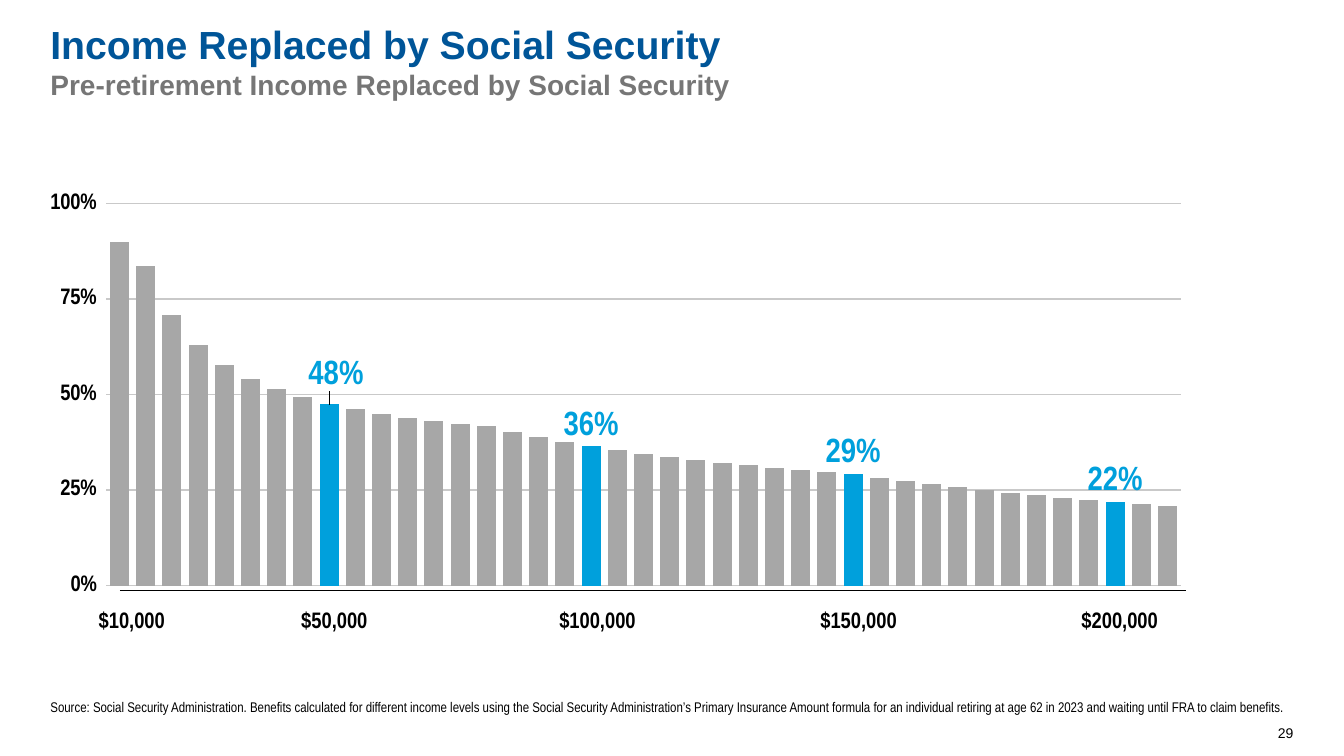
from lxml.etree import SubElement
from pptx import Presentation
from pptx.chart.data import CategoryChartData
from pptx.dml.color import RGBColor
from pptx.enum.chart import XL_CHART_TYPE as ChartType, XL_LABEL_POSITION as LabelPos
from pptx.enum.chart import XL_TICK_MARK as TickMark
from pptx.enum.shapes import MSO_CONNECTOR as Connector
from pptx.enum.text import MSO_ANCHOR as Anchor, PP_ALIGN as Align
from pptx.oxml import parse_xml
from pptx.oxml.ns import nsdecls, qn
from pptx.util import Pt

TITLE = "Income Replaced by Social Security"
SUBTITLE = "Pre-retirement Income Replaced by Social Security"
SOURCE = (
    "Source: Social Security Administration. Benefits calculated for different income "
    "levels using the Social Security Administration’s Primary Insurance Amount formula "
    "for an individual retiring at age 62 in 2023 and waiting until FRA to claim benefits."
)
PAGE = "29"
REPLACED = [
    0.9, 0.8374, 0.708, 0.6304, 0.5787, 0.5417, 0.514, 0.4925, 0.4752, 0.4611, 0.4493,
    0.4394, 0.4309, 0.4235, 0.417, 0.4026, 0.3886, 0.376, 0.3647, 0.3545, 0.3452,
    0.3367, 0.3289, 0.3218, 0.3152, 0.309, 0.3034, 0.2981, 0.2922, 0.2828, 0.274,
    0.2657, 0.2579, 0.2505, 0.2435, 0.237, 0.2307, 0.2248, 0.2192, 0.2138, 0.2087,
]
HIGHLIGHTS = [8, 18, 28, 38]
INCOMES = [("$10,000", 63.4), ("$50,000", 208.1), ("$100,000", 392.4),
           ("$150,000", 578.9), ("$200,000", 765.4)]  # label, left edge
PLOT_AREA = {"x": 0.047, "y": 0.023, "w": 0.947, "h": 0.931}
FIRST_LABEL_SHIFT = {"x": 0.006, "y": -0.02}

BLACK = RGBColor(0x00, 0x00, 0x00)
NAVY = RGBColor(0x00, 0x55, 0x98)
GRAY = RGBColor(0x76, 0x76, 0x76)
BAR = RGBColor(0xA7, 0xA7, 0xA7)
GRID = RGBColor(0xC9, 0xC9, 0xC9)
CYAN = RGBColor(0x00, 0xA0, 0xDC)
SANS, NARROW = "Arial", "Arial Narrow"


def style(font, size, color, name, bold=False):
    font.size, font.name, font.bold = Pt(size), name, bold
    font.color.rgb = color


def add_text(s, box, lines, anchor=Anchor.TOP, align=Align.LEFT, inset=(0, 0)):
    """Add a text box; each line is (text, size, color, font, bold)."""
    tf = s.shapes.add_textbox(*map(Pt, box)).text_frame
    tf.word_wrap, tf.vertical_anchor = True, anchor
    tf.margin_left = tf.margin_right = Pt(inset[0])
    tf.margin_top = tf.margin_bottom = Pt(inset[1])
    tf.text = "\n".join(line[0] for line in lines)
    for p, (_, size, color, name, bold) in zip(tf.paragraphs, lines):
        p.alignment = align
        style(p.runs[0].font, size, color, name, bold)
    return tf


def manual_layout(fractions, inner=False):
    layout = parse_xml(f"<c:layout {nsdecls('c')}><c:manualLayout/></c:layout>")
    settings = dict(fractions)
    if inner:
        settings = {"layoutTarget": "inner", "xMode": "edge", "yMode": "edge", **fractions}
    for tag, value in settings.items():
        SubElement(layout[0], qn(f"c:{tag}")).set("val", str(value))
    return layout


def add_bars(s):
    data = CategoryChartData(number_format="0%")
    data.categories = [str(i + 1) for i in range(len(REPLACED))]
    data.add_series("Series 1", REPLACED)
    chart = s.shapes.add_chart(ChartType.COLUMN_CLUSTERED, Pt(36), Pt(138.2),
                               Pt(812.2), Pt(293.8), data).chart
    chart.has_legend = chart.has_title = False
    style(chart.font, 13, BLACK, NARROW)

    chart.category_axis.visible = False
    axis = chart.value_axis
    axis.minimum_scale, axis.maximum_scale, axis.major_unit = 0, 1, 0.25
    axis.major_tick_mark = TickMark.OUTSIDE
    axis.format.line.fill.background()
    axis.major_gridlines.format.line.color.rgb = GRID
    axis.major_gridlines.format.line.width = Pt(1)
    axis.tick_labels.number_format = "0%"
    axis.tick_labels.number_format_is_linked = False
    style(axis.tick_labels.font, 16, BLACK, NARROW, True)

    plot = chart.plots[0]
    plot.gap_width, plot.overlap, plot.vary_by_categories = 38, -2, False
    series = plot.series[0]
    series.format.fill.solid()
    series.format.fill.fore_color.rgb = BAR
    series.data_labels.show_value = False
    for i in HIGHLIGHTS:
        point = series.points[i]
        point.format.fill.solid()
        point.format.fill.fore_color.rgb = CYAN
        style(point.data_label.font, 24, CYAN, NARROW, True)
        point.data_label.position = LabelPos.OUTSIDE_END

    area = chart.plots[0]._element.getparent()
    for old in area.findall(qn("c:layout")):
        area.remove(old)
    area.insert(0, manual_layout(PLOT_AREA, inner=True))
    labels = series.data_labels._element
    labels.find(qn("c:dLbl")).insert(1, manual_layout(FIRST_LABEL_SHIFT))
    labels.append(parse_xml(
        f'<c:extLst {nsdecls("c")}><c:ext uri="{{CE6537A1-D6FC-4f65-9D91-7224C49458BB}}" '
        'xmlns:c15="http://schemas.microsoft.com/office/drawing/2012/chart">'
        '<c15:showLeaderLines val="1"/></c:ext></c:extLst>'))


def main():
    prs = Presentation()
    prs.slide_width, prs.slide_height = Pt(960), Pt(540)
    s = prs.slides.add_slide(prs.slide_layouts[6])

    add_text(s, (895, 514.8, 28.8, 14.4), [(PAGE, 10, BLACK, SANS, False)],
             Anchor.BOTTOM, Align.RIGHT)
    source = add_text(s, (36, 499, 888, 12.2), [(SOURCE, 10, BLACK, NARROW, False)],
                      Anchor.BOTTOM)
    source.paragraphs[0].space_after = Pt(1.5)
    add_text(s, (36, 14.4, 684, 61.2), [(TITLE, 28, NAVY, SANS, True),
                                        (SUBTITLE, 20, GRAY, SANS, True)])
    add_bars(s)
    for income, left in INCOMES:
        add_text(s, (left, 429.1, 71.3, 18.7), [(income, 16, BLACK, NARROW, True)],
                 inset=(7.2, 3.6))

    baseline = s.shapes.add_connector(Connector.STRAIGHT, Pt(85.7), Pt(422),
                                      Pt(847.4), Pt(422))
    baseline.line.color.rgb, baseline.line.width = BLACK, Pt(0.75)
    SubElement(baseline._element.spPr, qn("a:effectLst"))
    prs.save("out.pptx")


if __name__ == "__main__":
    main()
